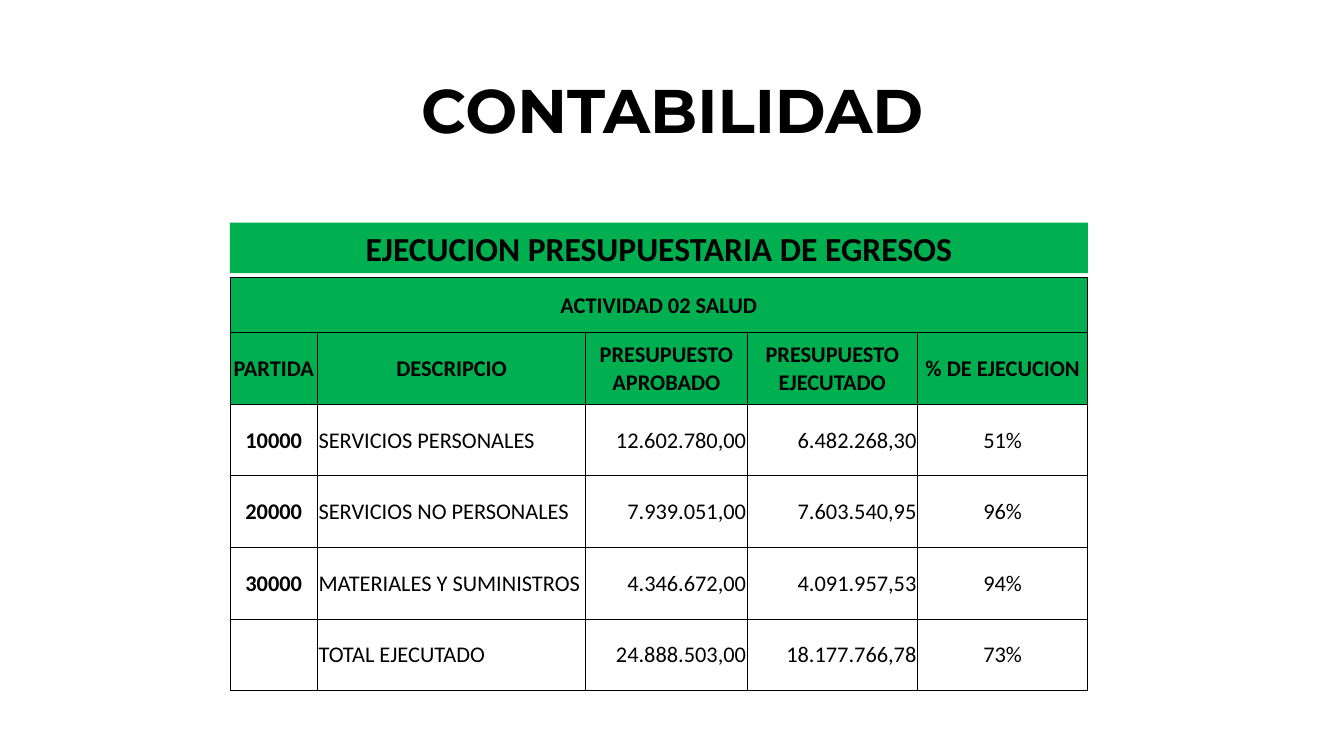
from dataclasses import dataclass

from lxml.etree import SubElement
from pptx import Presentation
from pptx.dml.color import RGBColor
from pptx.enum.shapes import MSO_SHAPE
from pptx.enum.text import MSO_ANCHOR, PP_ALIGN
from pptx.oxml.ns import qn
from pptx.util import Pt

PX = 9144
LEFT, CENTER, RIGHT = PP_ALIGN.LEFT, PP_ALIGN.CENTER, PP_ALIGN.RIGHT


@dataclass(frozen=True)
class Theme:
    ink: str = "000000"
    green: str = "00B050"
    title_font: str = "Montserrat"
    body_font: str = "Calibri"
    title_size: int = 44
    banner_size: int = 24
    cell_size: int = 16
    border: float = 0.5


class SlideBuilder:
    """Draws themed elements on one slide, with lengths in px (100 to the inch)."""

    def __init__(self, slide, theme):
        self.s = slide
        self.theme = theme

    def add_text(self, tf, text, size, font, align=CENTER, bold=True):
        p = tf.paragraphs[0]
        p.alignment = align
        r = p.add_run()
        r.text = text
        r.font.size = Pt(size)
        r.font.name = font
        r.font.bold = bold
        r.font.color.rgb = RGBColor.from_string(self.theme.ink)
        return p

    def paint(self, fill):
        fill.solid()
        fill.fore_color.rgb = RGBColor.from_string(self.theme.green)

    def title(self, text, *box):
        tf = self.s.shapes.add_textbox(*(n * PX for n in box)).text_frame
        tf.word_wrap = True
        tf.vertical_anchor = MSO_ANCHOR.MIDDLE
        p = self.add_text(tf, text, self.theme.title_size, self.theme.title_font)
        p.line_spacing = 0.9

    def banner(self, text, *box):
        sp = self.s.shapes.add_shape(MSO_SHAPE.RECTANGLE, *(n * PX for n in box))
        sp.shadow.inherit = False
        sp.line.fill.background()
        self.paint(sp.fill)
        self.add_text(sp.text_frame, text, self.theme.banner_size, self.theme.body_font)

    def outline(self, cell):
        tc_pr = cell._tc.get_or_add_tcPr()
        for side in ("a:lnL", "a:lnR", "a:lnT", "a:lnB"):
            ln = SubElement(tc_pr, qn(side), w=str(Pt(self.theme.border)))
            fill = SubElement(ln, qn("a:solidFill"))
            SubElement(fill, qn("a:srgbClr"), val=self.theme.ink)

    def cell(self, cell, text, header, align, bold):
        self.outline(cell)
        if header:
            self.paint(cell.fill)
        else:
            cell.fill.background()
        cell.vertical_anchor = MSO_ANCHOR.MIDDLE
        cell.margin_left = cell.margin_right = cell.margin_top = PX
        cell.margin_bottom = 0
        if text:
            self.add_text(cell.text_frame, text, self.theme.cell_size,
                          self.theme.body_font, align, bold)

    def table(self, rows, left, top, widths, heights, aligns, header_rows):
        table = self.s.shapes.add_table(
            len(rows), len(widths), left * PX, top * PX,
            sum(widths) * PX, sum(heights) * PX).table
        table.first_row = table.horz_banding = False
        for col, width in zip(table.columns, widths):
            col.width = width * PX
        for i, (row, height) in enumerate(zip(rows, heights)):
            table.rows[i].height = height * PX
            header = i < header_rows
            for j, text in enumerate(row):
                self.cell(table.cell(i, j), text, header,
                          CENTER if header else aligns[j], header or j == 0)
        table.cell(0, 0).merge(table.cell(0, len(widths) - 1))


BUDGET = [
    ("ACTIVIDAD 02 SALUD", "", "", "", ""),
    ("PARTIDA", "DESCRIPCIO", "PRESUPUESTO APROBADO", "PRESUPUESTO EJECUTADO",
     "% DE EJECUCION"),
    ("10000", "SERVICIOS PERSONALES", "12.602.780,00", "6.482.268,30", "51%"),
    ("20000", "SERVICIOS NO PERSONALES", "7.939.051,00", "7.603.540,95", "96%"),
    ("30000", "MATERIALES Y SUMINISTROS", "4.346.672,00", "4.091.957,53", "94%"),
    ("", "TOTAL EJECUTADO", "24.888.503,00", "18.177.766,78", "73%"),
]


def main():
    prs = Presentation()
    prs.slide_width, prs.slide_height = 1333 * PX, 750 * PX
    b = SlideBuilder(prs.slides.add_slide(prs.slide_layouts[6]), Theme())
    b.title("CONTABILIDAD", 92, 40, 1150, 145)
    b.banner("EJECUCION PRESUPUESTARIA DE EGRESOS", 228, 221, 851, 50)
    b.table(BUDGET, 228, 275, [87, 266, 160, 169, 169], [55] + [71] * 5,
            [CENTER, LEFT, RIGHT, RIGHT, CENTER], header_rows=2)
    prs.save("out.pptx")


if __name__ == "__main__":
    main()
